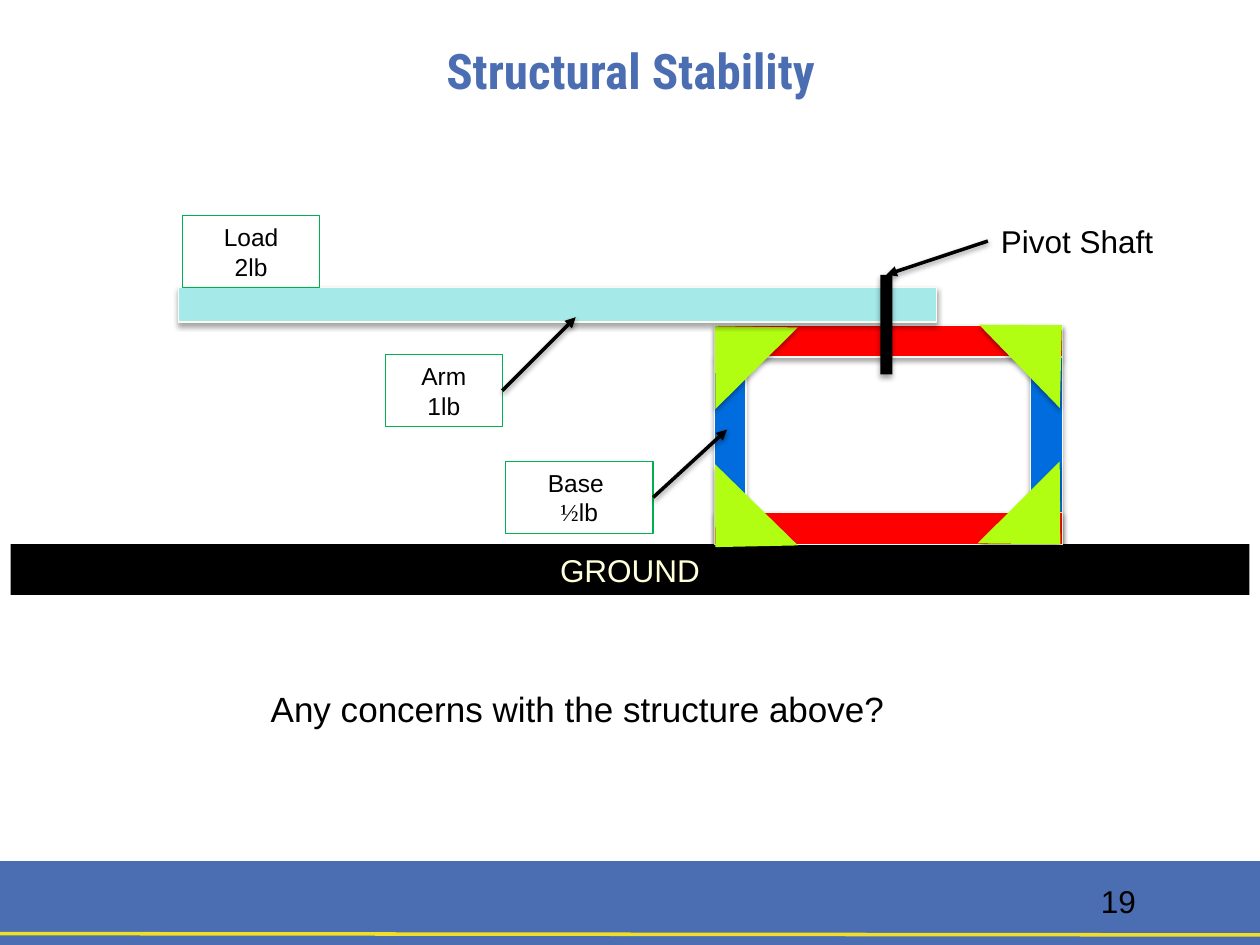
from lxml import etree
from pptx import Presentation
from pptx.dml.color import RGBColor
from pptx.enum.shapes import MSO_CONNECTOR, MSO_SHAPE
from pptx.enum.text import MSO_ANCHOR, PP_ALIGN
from pptx.oxml.ns import qn
from pptx.util import Pt

RECT = MSO_SHAPE.RECTANGLE
TRIANGLE = MSO_SHAPE.ISOSCELES_TRIANGLE
STRAIGHT = MSO_CONNECTOR.STRAIGHT
TOP, MIDDLE = MSO_ANCHOR.TOP, MSO_ANCHOR.MIDDLE
CENTER = PP_ALIGN.CENTER

BLACK, RED, BLUE, LIME = "000000", "FF0000", "006CDD", "B1FE13"
BRAND, EDGE, GREEN = "4B6DB2", "FAFAF1", "00B050"
SIDE_TOP, SIDE_LEFT, SIDE_RIGHT = 0, 1, 3


def rgb(hex_code):
    return RGBColor.from_string(hex_code)


def add_shadow(effects, alpha, dist):
    """Put a soft shadow, falling straight down, into an effect list."""
    shadow = etree.SubElement(
        effects, qn("a:outerShdw"), blurRad=str(Pt(3.1)), dist=str(Pt(dist)),
        dir="5400000", rotWithShape="0")
    color = etree.SubElement(shadow, qn("a:srgbClr"), val=BLACK)
    etree.SubElement(color, qn("a:alpha"), val=str(alpha * 1000))


def write(s, text, size, color=BLACK, font="Arial", bold=False, anchor=TOP):
    tf = s.text_frame
    tf.text = text
    tf.vertical_anchor = anchor
    for p in tf.paragraphs:
        p.alignment = CENTER
        for r in p.runs:
            r.font.name, r.font.size, r.font.bold = font, Pt(size), bold
            r.font.color.rgb = rgb(color)


def add_block(slide, kind, x, y, w, h, fill=None, line=None, shadow=False, angle=0):
    s = slide.shapes.add_shape(kind, Pt(x), Pt(y), Pt(w), Pt(h))
    s.rotation = angle
    if fill:
        s.fill.solid()
        s.fill.fore_color.rgb = rgb(fill)
    else:
        s.fill.background()
    if line:
        s.line.color.rgb = rgb(line)
        s.line.width = Pt(0.75)
    else:
        s.line.fill.background()
    s.shadow.inherit = False
    if shadow:
        add_shadow(s._element.spPr.find(qn("a:effectLst")), 35, 1.8)
    return s


def add_text(slide, x, y, w, h, text, size, wrap=True):
    s = slide.shapes.add_textbox(Pt(x), Pt(y), Pt(w), Pt(h))
    s.text_frame.word_wrap = wrap
    write(s, text, size)
    return s


def add_label(slide, x, y, w, text):
    s = add_block(slide, RECT, x, y, w, 41, line=GREEN)
    write(s, text, 14, anchor=MIDDLE)
    return s


def add_line(slide, x1, y1, x2, y2, color):
    c = slide.shapes.add_connector(STRAIGHT, Pt(x1), Pt(y1), Pt(x2), Pt(y2))
    c.line.color.rgb = rgb(color)
    c.line.width = Pt(2)
    effects = etree.SubElement(c._element.spPr, qn("a:effectLst"))
    return c, effects


def add_arrow(slide, source, side, x, y):
    """Draw an arrow from the middle of a shape's side to a point."""
    c, effects = add_line(slide, 0, 0, x, y, BLACK)
    c.begin_connect(source, side)
    etree.SubElement(c.line._get_or_add_ln(), qn("a:tailEnd"), type="triangle")
    add_shadow(effects, 38, 1.6)
    return c


def add_base(slide):
    left, top, width, bar, height = 408.25, 186, 198.75, 18, 125
    inner = height - 2 * bar
    right, bottom = left + width - bar, top + height - bar
    # Beams and posts
    for x, y, w, h, color in ((left, top, width, bar, RED),
                              (right, top + bar, bar, inner + bar, BLUE),
                              (left, top + bar, bar, inner + bar, BLUE),
                              (left, bottom, width, bar, RED)):
        add_block(slide, RECT, x, y, w, h, color, EDGE, True)
    # Corner gussets
    w, h = 66.25, 33.75
    for cx, cy, angle in ((594.7, 197.6, 45.9), (594, 299.1, 135.1),
                          (420.5, 198.4, 315.3), (420.5, 300.6, 224.4)):
        add_block(slide, TRIANGLE, cx - w / 2, cy - h / 2, w, h, LIME,
                  shadow=True, angle=angle)


def main():
    prs = Presentation()
    prs.slide_width, prs.slide_height = Pt(720), Pt(540)
    slide = prs.slides.add_slide(prs.slide_layouts[5])

    # Footer band
    add_block(slide, RECT, 0, 492, 720, 48, BRAND)
    add_line(slide, 0, 533.5, 720, 534.25, "F1DE27")

    # Title
    title = slide.shapes.title
    title.left, title.top, title.width, title.height = Pt(219.5), Pt(19.5), Pt(281.5), Pt(54)
    write(title, "Structural Stability", 28, BRAND, "Roboto Condensed", True)

    # Ground and question
    ground = add_block(slide, RECT, 6, 311, 708, 29, BLACK)
    write(ground, "GROUND", 18, "FFFFD9", anchor=MIDDLE)
    add_text(slide, 102.25, 389.5, 455.75, 31.5, "Any concerns with the structure above?", 20)

    # Structure
    add_base(slide)
    add_block(slide, RECT, 102, 164.5, 433, 19.5, "A5E9E9", EDGE, True)
    shaft = add_block(slide, RECT, 503, 157, 7, 57, BLACK, shadow=True)

    # Labels and arrows
    add_label(slide, 104.25, 123.25, 78.5, "Load\n2lb")
    pivot = add_text(slide, 564.5, 123.25, 102, 29, "Pivot Shaft", 18, wrap=False)
    add_arrow(slide, pivot, SIDE_LEFT, 506.5, 157).end_connect(shaft, SIDE_TOP)

    base = add_label(slide, 288.75, 263.75, 84.5, "Base \n½")
    half = base.text_frame.paragraphs[1]
    half.runs[0].font.name = "Times New Roman"
    unit = half.add_run()
    unit.text = "lb"
    unit.font.name, unit.font.size = "Arial", Pt(14)
    unit.font.color.rgb = rgb(BLACK)
    add_arrow(slide, base, SIDE_RIGHT, 415.5, 245.5)

    arm = add_label(slide, 220.25, 202.75, 66.75, "Arm\n1lb")
    add_arrow(slide, arm, SIDE_RIGHT, 329, 181.25)

    # Page number
    add_text(slide, 558, 500.5, 162, 29, "19", 18)

    prs.save("out.pptx")


if __name__ == "__main__":
    main()
